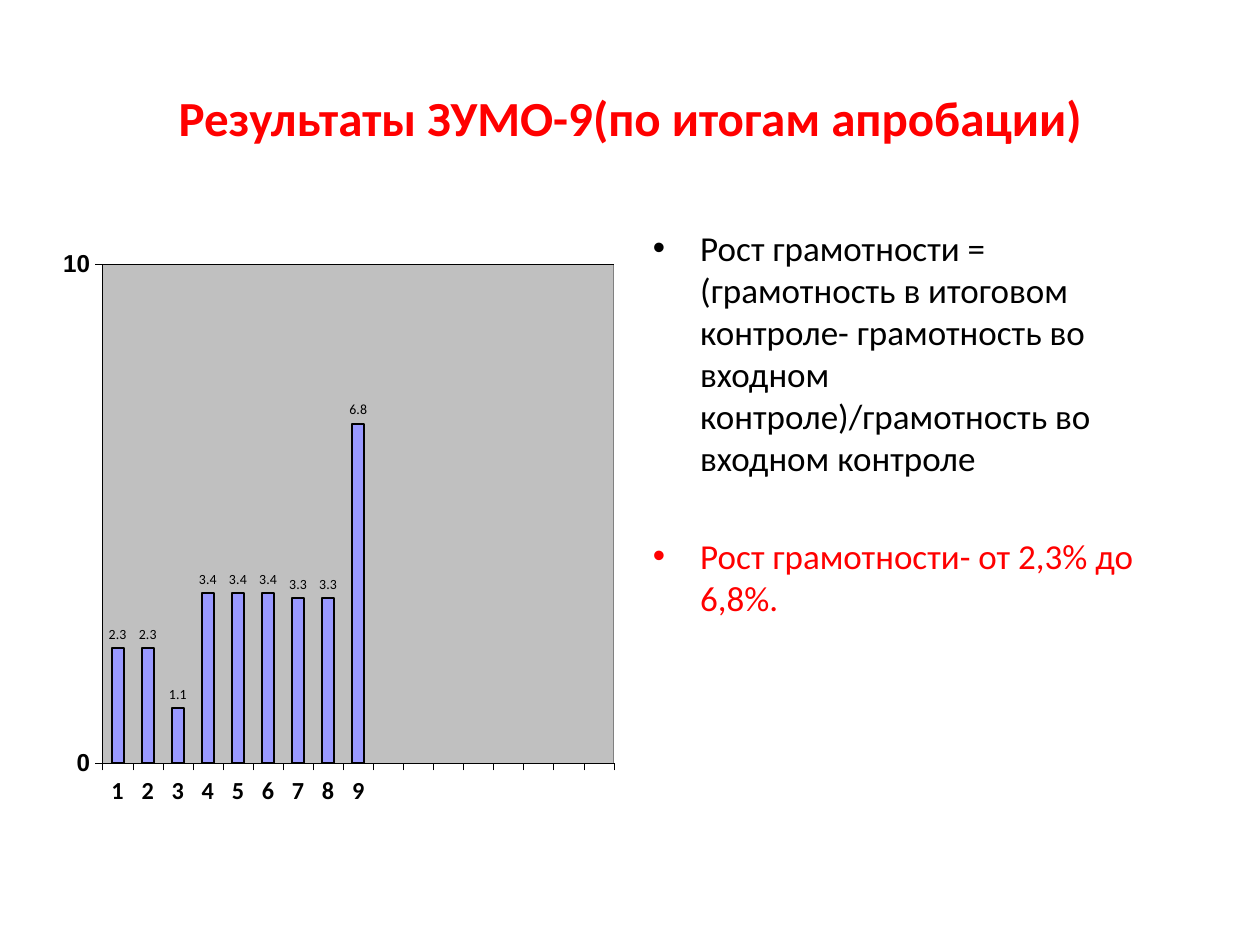
from lxml import etree
from pptx import Presentation
from pptx.chart.data import CategoryChartData
from pptx.dml.color import RGBColor
from pptx.enum.chart import XL_CHART_TYPE as ChartType
from pptx.enum.chart import XL_LABEL_POSITION as LabelPosition
from pptx.enum.chart import XL_TICK_MARK as TickMark
from pptx.enum.text import MSO_ANCHOR as Anchor
from pptx.enum.text import PP_ALIGN as Align
from pptx.oxml import parse_xml
from pptx.oxml.ns import nsdecls, qn
from pptx.util import Pt

BLACK = RGBColor(0x00, 0x00, 0x00)
RED = RGBColor(0xFF, 0x00, 0x00)
LILAC = RGBColor(0x99, 0x99, 0xFF)
SILVER = RGBColor(0xC0, 0xC0, 0xC0)
GRAY = RGBColor(0x80, 0x80, 0x80)

BULLET_INDENT = Pt(27)
GROWTH = [2.3, 2.3, 1.1, 3.4, 3.4, 3.4, 3.3, 3.3, 6.8]
CATEGORY_COUNT = 17


def set_font(font, size, color=BLACK, bold=False, name="Calibri"):
    font.name = name
    font.size = Pt(size)
    font.bold = bold
    font.color.rgb = color


def set_line(line, color=BLACK, width=0.25):
    line.color.rgb = color
    line.width = Pt(width)


def write(paragraph, text, align=Align.LEFT, before=0, bullet=False, **font):
    paragraph.alignment = align
    paragraph.space_before = Pt(before)
    if bullet:
        properties = paragraph._p.get_or_add_pPr()
        properties.set("marL", str(BULLET_INDENT))
        properties.set("indent", str(-BULLET_INDENT))
        etree.SubElement(properties, qn("a:buFont")).set("typeface", "Arial")
        etree.SubElement(properties, qn("a:buChar")).set("char", "•")
    run = paragraph.add_run()
    run.text = text
    set_font(run.font, **font)


def place_plot(chart, x, y, width, height):
    """Fix the inner plot area, in fractions of the chart."""
    plot_area = chart._chartSpace.chart.plotArea
    for layout in plot_area.findall(qn("c:layout")):
        plot_area.remove(layout)
    places = "".join(f'<c:{tag} val="{value}"/>' for tag, value in
                     zip("xywh", (x, y, width, height)))
    plot_area.insert(0, parse_xml(
        f'<c:layout {nsdecls("c")}><c:manualLayout><c:layoutTarget val="inner"/>'
        f'<c:xMode val="edge"/><c:yMode val="edge"/>{places}'
        '</c:manualLayout></c:layout>'))


def paint_plot(chart, fill, border):
    plot_area = chart._chartSpace.chart.plotArea
    plot_area.append(parse_xml(
        f'<c:spPr {nsdecls("c", "a")}>'
        f'<a:solidFill><a:srgbClr val="{fill}"/></a:solidFill>'
        f'<a:ln w="{Pt(0.5)}"><a:solidFill><a:srgbClr val="{border}"/></a:solidFill></a:ln>'
        '</c:spPr>'))


class SlideBuilder:
    def __init__(self, slide):
        self.slide = slide

    def text_box(self, left, top, width, height, anchor=Anchor.TOP):
        box = self.slide.shapes.add_textbox(Pt(left), Pt(top), Pt(width), Pt(height))
        frame = box.text_frame
        frame.word_wrap = True
        frame.vertical_anchor = anchor
        return frame

    def column_chart(self, left, top, width, height, categories, values):
        data = CategoryChartData(number_format="General")
        data.categories = categories
        data.add_series("Series 1", values)
        chart = self.slide.shapes.add_chart(
            ChartType.COLUMN_CLUSTERED, Pt(left), Pt(top), Pt(width), Pt(height), data).chart
        set_font(chart.font, 19.5, bold=True)
        chart.has_legend = False
        chart.has_title = False
        self.style_axis(chart.category_axis, "Calibri")
        self.style_axis(chart.value_axis, "Arial")
        self.style_columns(chart.plots[0])
        place_plot(chart, 0.06, 0.07, 0.93, 0.8)
        paint_plot(chart, SILVER, GRAY)
        return chart

    def style_axis(self, axis, font_name):
        set_font(axis.tick_labels.font, 14, bold=True, name=font_name)
        set_line(axis.format.line)
        axis.major_tick_mark = TickMark.OUTSIDE
        axis.minor_tick_mark = TickMark.NONE

    def style_columns(self, plot):
        plot.vary_by_categories = False
        plot.gap_width = 150
        series = plot.series[0]
        series.invert_if_negative = False
        series.format.fill.solid()
        series.format.fill.fore_color.rgb = LILAC
        set_line(series.format.line, width=1)
        labels = series.data_labels
        labels.show_value = True
        labels.position = LabelPosition.OUTSIDE_END
        set_font(labels.font, 8)


def main():
    presentation = Presentation()
    presentation.slide_width, presentation.slide_height = Pt(720), Pt(540)
    slide = presentation.slides.add_slide(presentation.slide_layouts[6])
    builder = SlideBuilder(slide)

    title = builder.text_box(36, 21.6, 648, 90, anchor=Anchor.MIDDLE)
    write(title.paragraphs[0], "Результаты ЗУМО-9(по итогам апробации)",
          align=Align.CENTER, size=28, color=RED, bold=True)

    categories = [str(number) if number <= len(GROWTH) else ""
                  for number in range(1, CATEGORY_COUNT + 1)]
    values = GROWTH + [None] * (CATEGORY_COUNT - len(GROWTH))
    chart = builder.column_chart(36, 126, 318, 356.4, categories, values)
    value_axis = chart.value_axis
    value_axis.minimum_scale, value_axis.maximum_scale = 0, 10
    value_axis.major_unit = 10
    value_axis.has_major_gridlines = True
    set_line(value_axis.major_gridlines.format.line)

    body = builder.text_box(366, 126, 318, 356.4)
    write(body.paragraphs[0],
          "Рост грамотности = (грамотность в итоговом контроле- грамотность во "
          "входном контроле)/грамотность во входном контроле",
          bullet=True, size=20)
    write(body.add_paragraph(), "Рост грамотности- от 2,3% до 6,8%.",
          before=32, bullet=True, size=20, color=RED)

    presentation.save("out.pptx")


if __name__ == "__main__":
    main()
